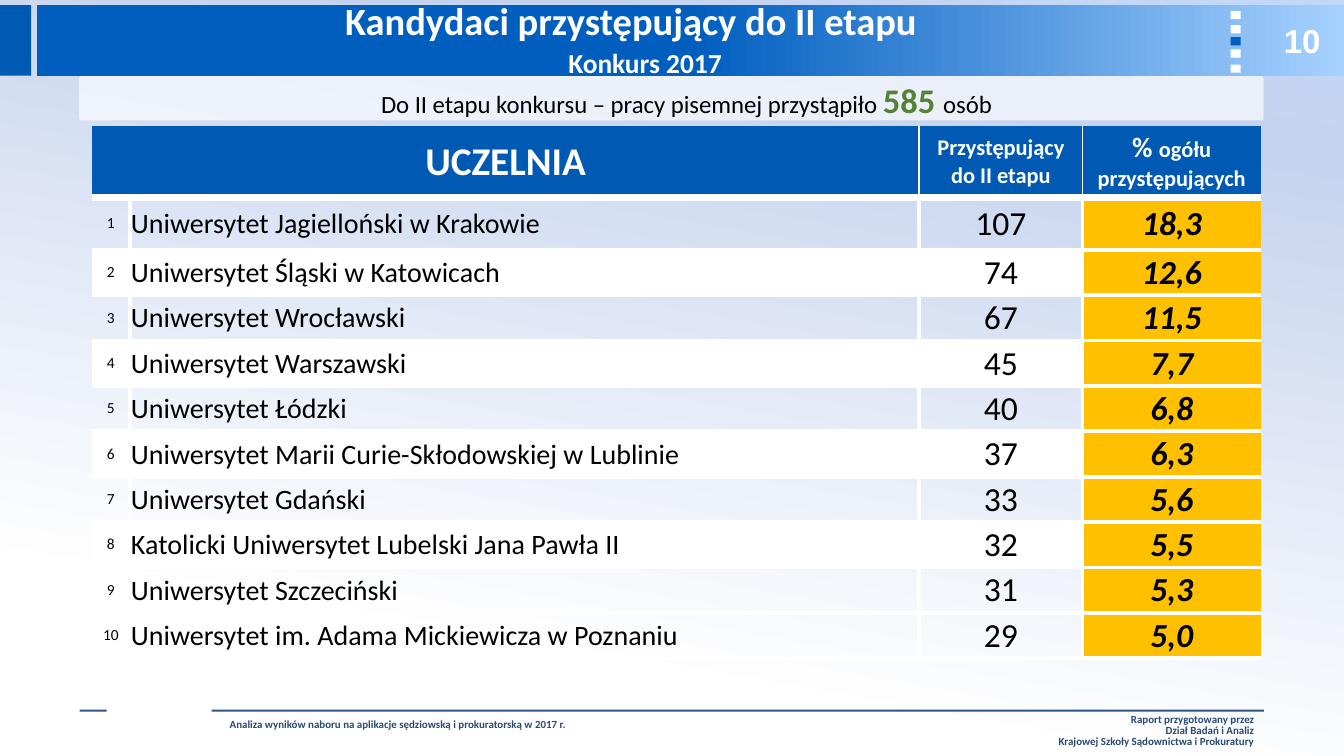
"""Build the slide ranking universities by candidates in the second stage."""
import lxml.etree
import pptx
import pptx.dml.color
import pptx.enum.shapes
import pptx.enum.text
import pptx.oxml.ns
import pptx.util

Pt = pptx.util.Pt
qn = pptx.oxml.ns.qn
ALIGN = pptx.enum.text.PP_ALIGN
MIDDLE = pptx.enum.text.MSO_ANCHOR.MIDDLE
SHAPES = pptx.enum.shapes.MSO_SHAPE

WHITE, BLACK, NAVY, BLUE = "FFFFFF", "000000", "005AB4", "005EBF"
GOLD, GREEN, RULE, FOOTER = "FFC000", "548235", "305480", "2A4A70"

TITLE = [[("Kandydaci przystępujący do II etapu", {})],
         [("Konkurs 2017", {"size": 19.6})]]
SUMMARY = [[("Do II etapu konkursu – pracy pisemnej przystąpiło ", {}),
            ("585 ", {"size": 24.6, "color": GREEN, "bold": True}),
            ("osób", {})]]
HEADINGS = [
    (0, [[("UCZELNIA", {"size": 28})]], 0),
    (2, [[("Przystępujący", {})], [("do II etapu", {})]], 0),
    (3, [[("% ", {"size": 20}), ("ogółu przystępujących", {})]], 10),
]
UNIVERSITIES = [
    ("Uniwersytet Jagielloński w Krakowie", "107", "18,3"),
    ("Uniwersytet Śląski w Katowicach", "74", "12,6"),
    ("Uniwersytet Wrocławski", "67", "11,5"),
    ("Uniwersytet Warszawski", "45", "7,7"),
    ("Uniwersytet Łódzki", "40", "6,8"),
    ("Uniwersytet Marii Curie-Skłodowskiej w Lublinie", "37", "6,3"),
    ("Uniwersytet Gdański", "33", "5,6"),
    ("Katolicki Uniwersytet Lubelski Jana Pawła II", "32", "5,5"),
    ("Uniwersytet Szczeciński", "31", "5,3"),
    ("Uniwersytet im. Adama Mickiewicza w Poznaniu", "29", "5,0"),
]
REPORT_TITLE = "Analiza wyników naboru na aplikacje sędziowską i prokuratorską w 2017 r."
AUTHORS = ["Raport przygotowany przez", "Dział Badań i Analiz",
           "Krajowej Szkoły Sądownictwa i Prokuratury"]

BACKDROP_STOPS = [(19, WHITE), (84, "C5D3EE"), (100, "C2D8F8")]
HEADER_STOPS = [(50, BLUE), (100, "A6D1FF")]
MARKERS = [(7.9, WHITE), (18, WHITE), (26.6, BLUE), (35.3, WHITE), (46.1, WHITE)]
COLUMN_WIDTHS = [27.4, 563.8, 116.6, 127.4]
ROW_HEIGHTS = [51.1, 37.4] + [32.4] * 9
WIDE_INSETS, TIGHT_INSETS = (2.2, 0, 2.2, 0), (0.7, 0.7, 0.7, 0)
COLUMN_FORMATS = [
    {"size": 11, "align": ALIGN.CENTER, "insets": WIDE_INSETS},
    {"size": 20, "insets": TIGHT_INSETS},
    {"size": 24, "align": ALIGN.CENTER, "insets": TIGHT_INSETS},
    {"size": 24, "align": ALIGN.CENTER, "insets": TIGHT_INSETS,
     "bold": True, "italic": True},
]


def rgb(code):
    return pptx.dml.color.RGBColor.from_string(code)


def write(holder, lines, align=ALIGN.LEFT, anchor=None, insets=None,
          spacing=None, after=0, indents=(), **run_format):
    """Fill a text box or cell from a string or from lines of (text, format) runs."""
    if isinstance(lines, str):
        lines = [[(lines, {})]]
    frame = holder.text_frame
    frame.word_wrap = True
    if insets:
        (holder.margin_left, holder.margin_top,
         holder.margin_right, holder.margin_bottom) = map(Pt, insets)
    if anchor is not None:
        target = holder if insets else frame
        target.vertical_anchor = anchor
    for index, line in enumerate(lines):
        paragraph = frame.add_paragraph() if index else frame.paragraphs[0]
        paragraph.alignment = align
        paragraph.space_after = Pt(after)
        if spacing:
            paragraph.line_spacing = spacing
        if indents:
            paragraph._p.get_or_add_pPr().set("marL", str(Pt(indents[index])))
        for text, override in line:
            style = {"size": 16, "color": BLACK, "bold": False, "italic": False,
                     "font": "Calibri", **run_format, **override}
            run = paragraph.add_run()
            run.text = text
            run.font.name = style["font"]
            run.font.size = Pt(style["size"])
            run.font.bold = style["bold"]
            run.font.italic = style["italic"]
            run.font.color.rgb = rgb(style["color"])


def text_box(slide, box, lines, **text_format):
    write(slide.shapes.add_textbox(*map(Pt, box)), lines, **text_format)


def add_color(parent, color, opacity=100):
    node = lxml.etree.SubElement(parent, qn("a:srgbClr"), val=color)
    if opacity < 100:
        lxml.etree.SubElement(node, qn("a:alpha"), val=str(opacity * 1000))


def panel(slide, box, color=WHITE, kind=SHAPES.RECTANGLE, opacity=100,
          stops=None, angle=0):
    shape = slide.shapes.add_shape(kind, *map(Pt, box))
    shape.shadow.inherit = False
    shape.line.fill.background()
    if stops:
        shape.fill.gradient()
        shape.fill.gradient_angle = angle
        stop_list = shape._element.spPr.find(qn("a:gradFill")).find(qn("a:gsLst"))
        for old in list(stop_list):
            stop_list.remove(old)
        for position, stop_color in stops:
            stop = lxml.etree.SubElement(stop_list, qn("a:gs"), pos=str(position * 1000))
            add_color(stop, stop_color)
    else:
        shape.fill.solid()
        shape.fill.fore_color.rgb = rgb(color)
        if opacity < 100:
            solid = shape._element.spPr.find(qn("a:solidFill"))
            solid.remove(solid[0])
            add_color(solid, color, opacity)
    return shape


def style_cell(cell, fill, borders):
    properties = cell._tc.get_or_add_tcPr()
    for side in "LRTB":
        width = borders.get(side, 0)
        line = lxml.etree.SubElement(properties, qn("a:ln" + side), w=str(Pt(width)))
        if width:
            add_color(lxml.etree.SubElement(line, qn("a:solidFill")), WHITE)
        else:
            lxml.etree.SubElement(line, qn("a:noFill"))
    if fill:
        cell.fill.solid()
        cell.fill.fore_color.rgb = rgb(fill)
    else:
        cell.fill.background()


def ranking_table(slide):
    table = slide.shapes.add_table(
        len(ROW_HEIGHTS), len(COLUMN_WIDTHS), Pt(65.5), Pt(90),
        Pt(sum(COLUMN_WIDTHS)), Pt(sum(ROW_HEIGHTS))).table
    table.horz_banding = False
    for column, width in zip(table.columns, COLUMN_WIDTHS):
        column.width = Pt(width)
    for row, height in zip(table.rows, ROW_HEIGHTS):
        row.height = Pt(height)

    table.cell(0, 0).merge(table.cell(0, 1))
    for column in range(4):
        borders = {"B": 6}
        if column > 1:
            borders["L"] = 1.5
        if column < 3:
            borders["R"] = 1.5
        style_cell(table.cell(0, column), NAVY, borders)
    for column, heading, after in HEADINGS:
        write(table.cell(0, column), heading, align=ALIGN.CENTER, anchor=MIDDLE,
              insets=WIDE_INSETS, after=after, color=WHITE, bold=True)

    for rank, university in enumerate(UNIVERSITIES, 1):
        band = WHITE if rank % 2 == 0 and rank < 10 else None
        for column, value in enumerate((str(rank), *university)):
            borders = {"T": 6 if rank == 1 else 3, "B": 3}
            if column > 0:
                borders["L"] = 3
            if column < 3:
                borders["R"] = 3
            cell = table.cell(rank, column)
            style_cell(cell, GOLD if column == 3 else band, borders)
            write(cell, value, anchor=MIDDLE, **COLUMN_FORMATS[column])


def main():
    deck = pptx.Presentation()
    deck.slide_width, deck.slide_height = Pt(960), Pt(540)
    slide = deck.slides.add_slide(deck.slide_layouts[6])

    panel(slide, (0, 0, 960, 540), stops=BACKDROP_STOPS, angle=80)
    panel(slide, (26.6, 3.6, 933.4, 50.4), stops=HEADER_STOPS)
    panel(slide, (0, 3.6, 22.3, 50.4), NAVY)
    for top, color in MARKERS:
        panel(slide, (879.1, top, 7.2, 5.8), color)
    text_box(slide, (908.6, 10.8, 43.2, 36), "10", align=ALIGN.CENTER,
             anchor=MIDDLE, size=23.6, font="Arial", color=WHITE, bold=True)
    text_box(slide, (77.8, 0.7, 745.9, 61.2), TITLE, align=ALIGN.CENTER, spacing=0.8,
             after=6.5, indents=(0, 20), size=27.5, color=WHITE, bold=True)

    ranking_table(slide)

    summary_band = panel(slide, (56.6, 54.4, 846, 31.7), opacity=65,
                         kind=SHAPES.ROUNDED_RECTANGLE)
    summary_band.adjustments[0] = 0.05
    text_box(slide, (82.8, 48.2, 815, 41.8), SUMMARY, align=ALIGN.CENTER,
             spacing=1.15, after=10, size=17.7)

    panel(slide, (80.6, 473, 65.5, 62.6), kind=SHAPES.OVAL, opacity=75)
    text_box(slide, (157, 509, 257.8, 16.6), REPORT_TITLE,
             size=7.8, color=FOOTER, bold=True)
    text_box(slide, (745.9, 506.9, 157, 31.7), [[(line, {})] for line in AUTHORS],
             align=ALIGN.RIGHT, spacing=0.85, size=7.8, color=FOOTER, bold=True)
    for left, width in ((151.2, 751.7), (56.9, 19.4)):
        panel(slide, (left, 506.9, width, 1.4), RULE)

    deck.save("out.pptx")


if __name__ == "__main__":
    main()
